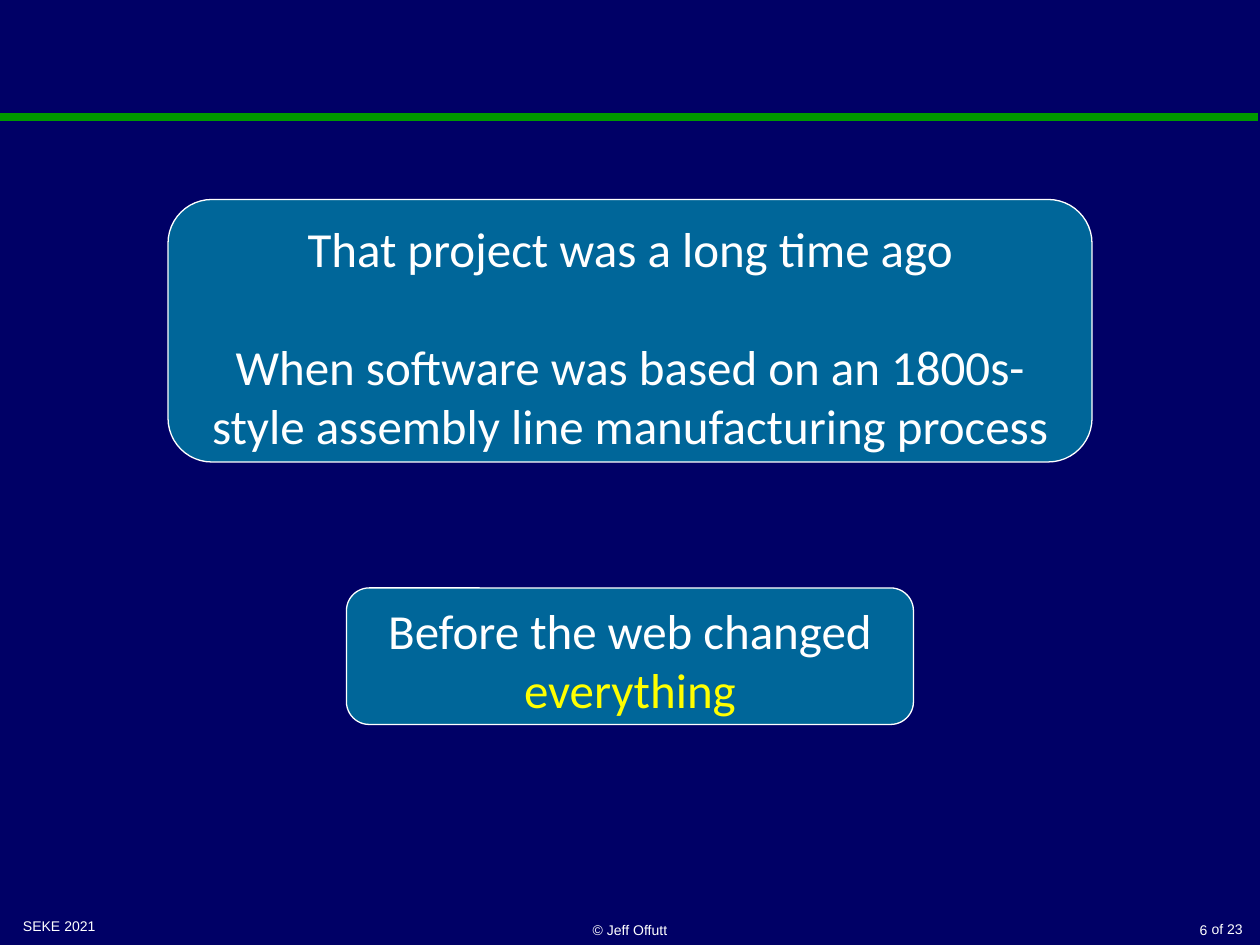
from dataclasses import dataclass

from lxml import etree
from pptx import Presentation
from pptx.dml.color import RGBColor
from pptx.enum import shapes, text
from pptx.oxml.ns import qn
from pptx.util import Pt


@dataclass(frozen=True)
class Theme:
    background: str = "000066"
    rule: str = "009900"
    panel: str = "006699"
    ink: str = "FFFFFF"
    accent: str = "FFFF00"
    panel_font: str = "Calibri"
    footer_font: str = "Arial"
    panel_size: float = 28
    footer_size: float = 8
    paragraph_gap: float = 34


@dataclass(frozen=True)
class Box:
    left: float
    top: float
    width: float
    height: float

    def lengths(self) -> tuple:
        return Pt(self.left), Pt(self.top), Pt(self.width), Pt(self.height)


@dataclass(frozen=True)
class Run:
    wording: str
    color: str


@dataclass(frozen=True)
class Panel:
    box: Box
    paragraphs: tuple[tuple[Run, ...], ...]


@dataclass(frozen=True)
class Footer:
    wording: str
    box: Box
    alignment: text.PP_ALIGN
    anchor: text.MSO_ANCHOR
    wrap: bool = True


THEME = Theme()
ALIGN = text.PP_ALIGN
ANCHOR = text.MSO_ANCHOR

PANELS = (
    Panel(Box(96, 114, 528, 150), (
        (Run("That project was a long time ago", THEME.ink),),
        (Run("When software was based on an 1800s-style assembly line "
             "manufacturing process", THEME.ink),),
    )),
    Panel(Box(198, 336, 324, 78), (
        (Run("Before the web changed ", THEME.ink),
         Run("everything", THEME.accent)),
    )),
)

FOOTERS = (
    Footer("of 23", Box(684, 522.5, 33.3, 17), ALIGN.RIGHT, ANCHOR.TOP, wrap=False),
    Footer("SEKE 2021", Box(6, 520.5, 168, 19), ALIGN.LEFT, ANCHOR.TOP),
    Footer("© Jeff Offutt", Box(246, 520.5, 228, 19.5), ALIGN.CENTER, ANCHOR.BOTTOM),
    Footer("6", Box(566.5, 520.5, 130.5, 19.5), ALIGN.RIGHT, ANCHOR.BOTTOM),
)


def rgb(color: str) -> RGBColor:
    return RGBColor.from_string(color)


def draw_rule(slide) -> None:
    connector = slide.shapes.add_connector(
        shapes.MSO_CONNECTOR.STRAIGHT, Pt(0), Pt(67), Pt(719), Pt(67))
    connector.line.color.rgb = rgb(THEME.rule)
    connector.line.width = Pt(4.5)
    etree.SubElement(connector._element.spPr, qn("a:effectLst"))


def draw_panel(slide, panel: Panel) -> None:
    shape = slide.shapes.add_shape(
        shapes.MSO_SHAPE.ROUNDED_RECTANGLE, *panel.box.lengths())
    shape.shadow.inherit = False
    shape.fill.solid()
    shape.fill.fore_color.rgb = rgb(THEME.panel)
    shape.line.color.rgb = rgb(THEME.ink)
    shape.line.width = Pt(0.75)
    frame = shape.text_frame
    frame.word_wrap = True
    frame.vertical_anchor = ANCHOR.TOP
    for index, runs in enumerate(panel.paragraphs):
        paragraph = frame.add_paragraph() if index else frame.paragraphs[0]
        paragraph.alignment = ALIGN.CENTER
        if index:
            paragraph.space_before = Pt(THEME.paragraph_gap)
        paragraph.font.name = THEME.panel_font
        paragraph.font.size = Pt(THEME.panel_size)
        for item in runs:
            run = paragraph.add_run()
            run.text = item.wording
            run.font.color.rgb = rgb(item.color)


def draw_footer(slide, footer: Footer) -> None:
    frame = slide.shapes.add_textbox(*footer.box.lengths()).text_frame
    frame.word_wrap = footer.wrap
    frame.vertical_anchor = footer.anchor
    paragraph = frame.paragraphs[0]
    paragraph.text = footer.wording
    paragraph.alignment = footer.alignment
    paragraph.font.name = THEME.footer_font
    paragraph.font.size = Pt(THEME.footer_size)
    paragraph.font.color.rgb = rgb(THEME.ink)


def main() -> None:
    presentation = Presentation()
    presentation.slide_width = Pt(720)
    presentation.slide_height = Pt(540)
    slide = presentation.slides.add_slide(presentation.slide_layouts[6])
    slide.background.fill.solid()
    slide.background.fill.fore_color.rgb = rgb(THEME.background)
    draw_rule(slide)
    for footer in FOOTERS:
        draw_footer(slide, footer)
    for panel in PANELS:
        draw_panel(slide, panel)
    presentation.save("out.pptx")


if __name__ == "__main__":
    main()
